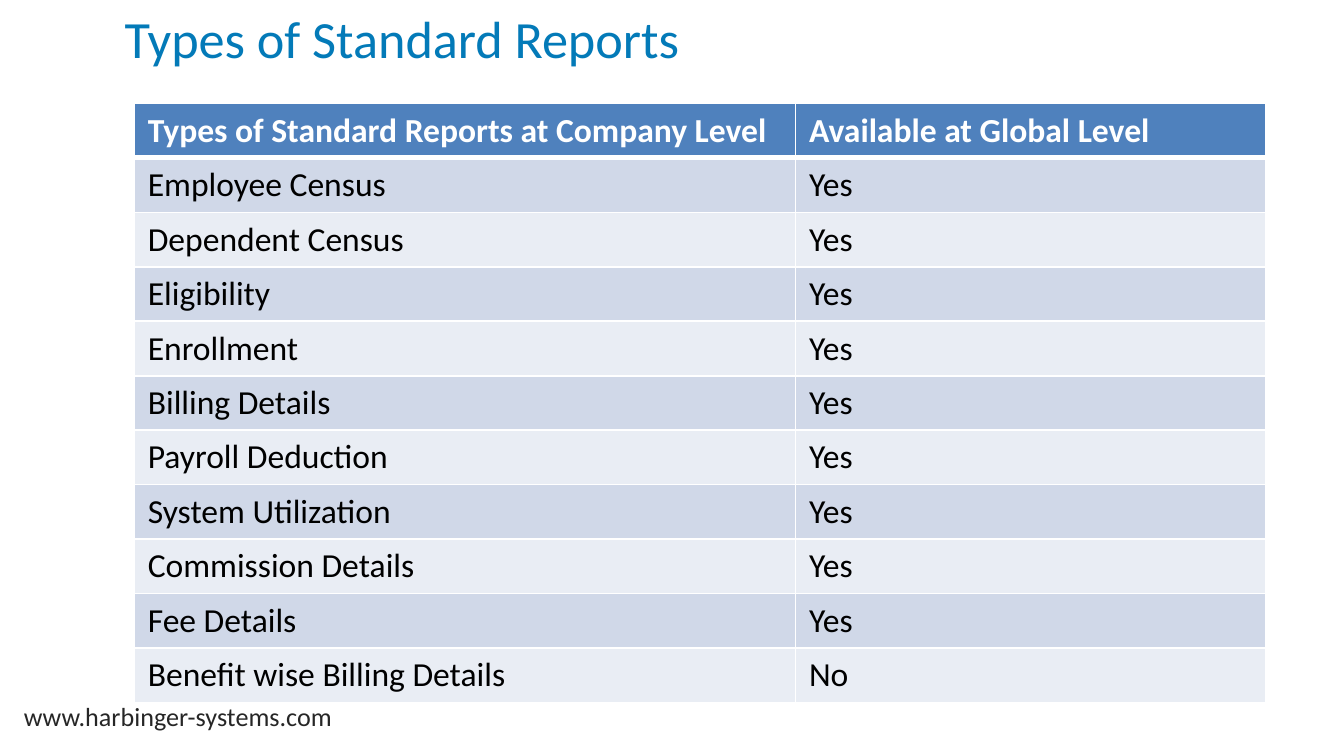
from dataclasses import dataclass

from lxml import etree
from pptx import Presentation, util as u
from pptx.dml.color import RGBColor
from pptx.oxml.ns import qn

TITLE = "Types of Standard Reports"
WEBSITE = "www.harbinger-systems.com"
HEADINGS = ("Types of Standard Reports at Company Level", "Available at Global Level")
REPORTS = [
    ("Employee Census", "Yes"),
    ("Dependent Census", "Yes"),
    ("Eligibility", "Yes"),
    ("Enrollment", "Yes"),
    ("Billing Details", "Yes"),
    ("Payroll Deduction", "Yes"),
    ("System Utilization", "Yes"),
    ("Commission Details", "Yes"),
    ("Fee Details", "Yes"),
    ("Benefit wise Billing Details", "No"),
]


@dataclass(frozen=True)
class Theme:
    font: str = "Calibri"
    title_size: int = 28
    table_size: int = 18
    website_size: int = 14
    title: str = "037AB8"
    website: str = "262626"
    header: str = "4F81BD"
    bands: tuple = ("D0D8E8", "E9EDF4")
    white: str = "FFFFFF"
    body: str = "000000"
    rule: int = 1
    header_rule: int = 3


THEME = Theme()
SLIDE_WIDTH = 10
SLIDE_HEIGHT = SLIDE_WIDTH * 9 / 16
TABLE_LEFT, TABLE_TOP = 1, 0.77
COLUMNS = (4.92, 3.5)
TABLE_HEIGHT = 4.46


def style_text(frame, size, color, bold=False):
    for paragraph in frame.paragraphs:
        for run in paragraph.runs:
            run.font.name = THEME.font
            run.font.size = u.Pt(size)
            run.font.bold = bold
            run.font.color.rgb = RGBColor.from_string(color)


def add_label(slide, box, label, size, color):
    frame = slide.shapes.add_textbox(*map(u.Inches, box)).text_frame
    frame.word_wrap = True
    frame.text = label
    style_text(frame, size, color)


def add_borders(cell, widths):
    properties = cell._tc.get_or_add_tcPr()
    for side, width in widths.items():
        line = etree.SubElement(properties, qn(f"a:ln{side}"), w=str(u.Pt(width)))
        fill = etree.SubElement(line, qn("a:solidFill"))
        etree.SubElement(fill, qn("a:srgbClr"), val=THEME.white)


def add_reports(slide):
    rows = [HEADINGS, *REPORTS]
    table = slide.shapes.add_table(
        len(rows), len(COLUMNS),
        *map(u.Inches, (TABLE_LEFT, TABLE_TOP, sum(COLUMNS), TABLE_HEIGHT)),
    ).table
    for column, width in zip(table.columns, COLUMNS):
        column.width = u.Inches(width)
    for r, row in enumerate(rows):
        is_header = r == 0
        fill = THEME.header if is_header else THEME.bands[(r - 1) % 2]
        color = THEME.white if is_header else THEME.body
        borders = dict.fromkeys("LRTB", THEME.rule)
        if is_header:
            borders["B"] = THEME.header_rule
        elif r == 1:
            borders["T"] = THEME.header_rule
        for c, entry in enumerate(row):
            cell = table.cell(r, c)
            cell.text_frame.text = entry
            style_text(cell.text_frame, THEME.table_size, color, is_header)
            add_borders(cell, borders)
            cell.fill.solid()
            cell.fill.fore_color.rgb = RGBColor.from_string(fill)


def main():
    deck = Presentation()
    deck.slide_width = u.Inches(SLIDE_WIDTH)
    deck.slide_height = u.Inches(SLIDE_HEIGHT)
    slide = deck.slides.add_slide(deck.slide_layouts[6])
    add_label(slide, (0.08, 5.16, 3.25, 0.34), WEBSITE, THEME.website_size, THEME.website)
    add_label(slide, (0.83, 0, 9.06, 0.73), TITLE, THEME.title_size, THEME.title)
    add_reports(slide)
    deck.save("out.pptx")


if __name__ == "__main__":
    main()
